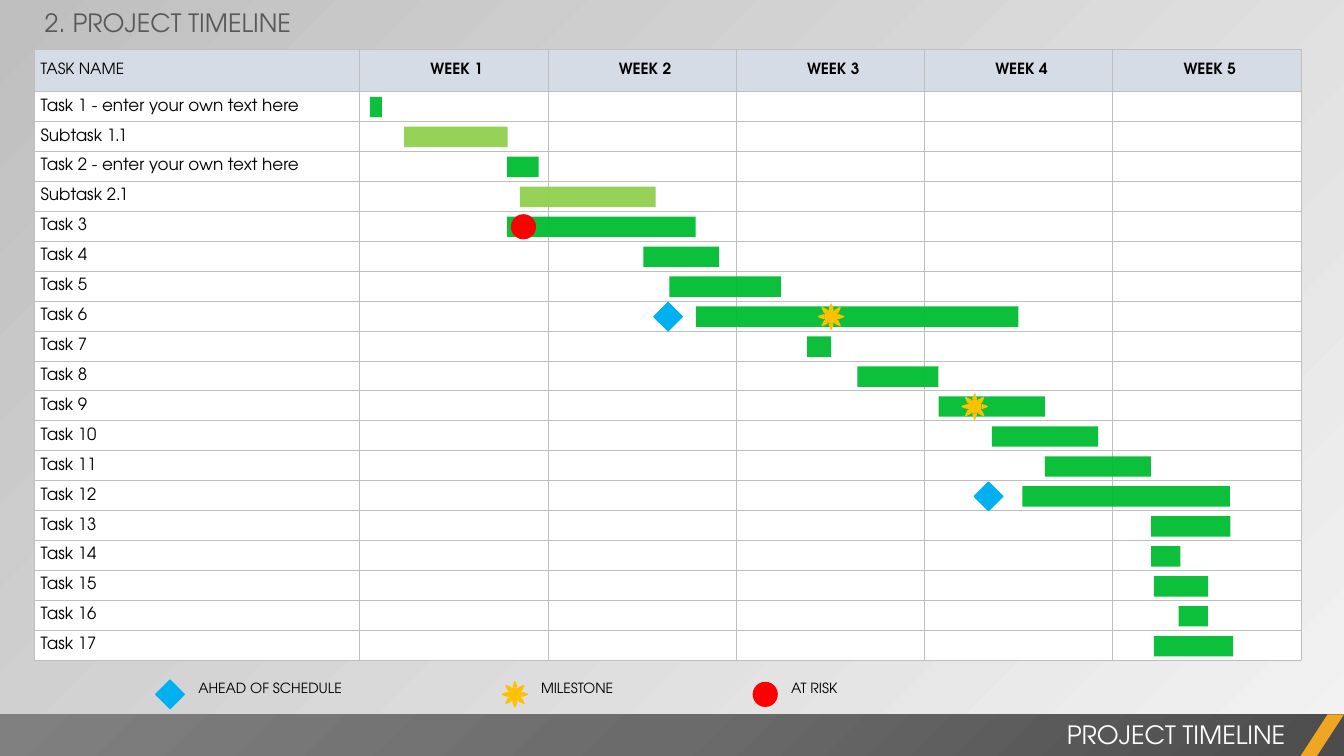
"""Build a five-week project timeline slide with a Gantt table, markers and a legend."""
import pptx
import pptx.dml.color
import pptx.enum.shapes
import pptx.enum.text
import pptx.oxml
import pptx.oxml.ns
import pptx.util
from lxml import etree

Pt = pptx.util.Pt
RGBColor = pptx.dml.color.RGBColor
Shape = pptx.enum.shapes.MSO_SHAPE
Align = pptx.enum.text.PP_ALIGN
Anchor = pptx.enum.text.MSO_ANCHOR
qn = pptx.oxml.ns.qn

FONT = "TeX Gyre Adventor"
BLACK = RGBColor(0x00, 0x00, 0x00)
WHITE = RGBColor(0xFF, 0xFF, 0xFF)
TITLE_GRAY = RGBColor(0x59, 0x59, 0x59)
HEADER_BLUE = RGBColor(0xD6, 0xDC, 0xE5)
GRID_GRAY = RGBColor(0xBF, 0xBF, 0xBF)
PALE_GRAY = RGBColor(0xF2, 0xF2, 0xF2)
TASK_GREEN = RGBColor(0x00, 0xBD, 0x32)
SUBTASK_GREEN = RGBColor(0x92, 0xD0, 0x50)
AHEAD_BLUE = RGBColor(0x00, 0xB0, 0xF0)
MILESTONE_GOLD = RGBColor(0xFF, 0xC0, 0x00)
RISK_RED = RGBColor(0xFF, 0x00, 0x00)
ACCENT_ORANGE = RGBColor(0xF0, 0xA6, 0x22)
FOOTER_STOPS = [(0, RGBColor(0x4C, 0x4C, 0x4C)), (50, RGBColor(0x6B, 0x6B, 0x6B)),
                (100, RGBColor(0x80, 0x80, 0x80))]

HEADERS = ["TASK NAME", "WEEK 1", "WEEK 2", "WEEK 3", "WEEK 4", "WEEK 5"]
TASKS = [
    ("Task 1 - enter your own text here", 264.2, 8.6),
    ("Subtask 1.1", 288.6, 74),
    ("Task 2 - enter your own text here", 362.3, 22.5),
    ("Subtask 2.1", 371.4, 97),
    ("Task 3", 362.3, 134.6),
    ("Task 4", 459.6, 54),
    ("Task 5", 478.2, 79.7),
    ("Task 6", 497, 230.5),
    ("Task 7", 576.5, 17.2),
    ("Task 8", 612.4, 58),
    ("Task 9", 670.5, 75.9),
    ("Task 10", 708.6, 75.8),
    ("Task 11", 746.4, 75.8),
    ("Task 12", 730.2, 148.4),
    ("Task 13", 822.3, 56.6),
    ("Task 14", 822.3, 20.8),
    ("Task 15", 824.2, 38.8),
    ("Task 16", 841.9, 20.9),
    ("Task 17", 824.2, 56.6),
]
MARKER_STYLES = {
    "ahead": (Shape.RECTANGLE, 14.4, AHEAD_BLUE, True),
    "milestone": (Shape.SUN, 18, MILESTONE_GOLD, True),
    "risk": (Shape.OVAL, 18, RISK_RED, False),
}
TASK_MARKERS = [
    ("risk", "Task 3", 373.9), ("milestone", "Task 6", 593.7), ("milestone", "Task 9", 696.2),
    ("ahead", "Task 6", 477.2), ("ahead", "Task 12", 706.1),
]
LEGEND = [
    ("ahead", 121.5, "AHEAD OF SCHEDULE", 134.6, 118.8),
    ("milestone", 367.8, "MILESTONE", 379.4, 67),
    ("risk", 546.6, "AT RISK", 558, 48.2),
]

SLIDE_WIDTH, SLIDE_HEIGHT = 960, 540
TABLE_LEFT, TABLE_TOP = 24.7, 35.4
NAME_WIDTH, WEEK_WIDTH = 232.2, 134.5
HEADER_HEIGHT, ROW_HEIGHT, BAR_HEIGHT = 30, 21.4, 14.6
LEGEND_CENTER, LEGEND_TOP = 496, 481.7
FOOTER_TOP, FOOTER_HEIGHT = 510.3, 30


def row_center(row):
    return TABLE_TOP + HEADER_HEIGHT + (row + 0.5) * ROW_HEIGHT + 0.3


def format_font(paragraph, size, color, bold=False):
    paragraph.font.name = FONT
    paragraph.font.size = Pt(size)
    paragraph.font.bold = bold
    paragraph.font.color.rgb = color


def place(shape, left, top, width, height):
    shape.left, shape.top, shape.width, shape.height = map(Pt, (left, top, width, height))


def write_text(shape, text, size, color, align=Align.LEFT, wrap=False):
    frame = shape.text_frame
    frame.text = text
    frame.word_wrap = wrap
    frame.auto_size = pptx.enum.text.MSO_AUTO_SIZE.SHAPE_TO_FIT_TEXT
    frame.vertical_anchor = Anchor.TOP
    frame.paragraphs[0].alignment = align
    format_font(frame.paragraphs[0], size, color)


def add_text(slide, box, text, size, color, **options):
    write_text(slide.shapes.add_textbox(*map(Pt, box)), text, size, color, **options)


def add_plain_shape(slide, kind, box, color=None, outlined=False):
    shape = slide.shapes.add_shape(kind, *map(Pt, box))
    shape.shadow.inherit = False
    if color is not None:
        shape.fill.solid()
        shape.fill.fore_color.rgb = color
    if outlined:
        shape.line.color.rgb = color
        shape.line.width = Pt(1)
    else:
        shape.line.fill.background()
    return shape


def add_marker(slide, style, center_x, center_y):
    kind, size, color, outlined = MARKER_STYLES[style]
    box = (center_x - size / 2, center_y - size / 2, size, size)
    add_plain_shape(slide, kind, box, color, outlined).rotation = 45


def format_cell(cell, text, header, centered):
    cell.margin_left = Pt(4.3)
    cell.margin_right = cell.margin_top = cell.margin_bottom = 0
    cell.vertical_anchor = Anchor.MIDDLE
    for side in ("a:lnL", "a:lnR", "a:lnT", "a:lnB"):
        border = etree.SubElement(cell._tc.get_or_add_tcPr(), qn(side), w=str(Pt(0.5)))
        border_fill = etree.SubElement(border, qn("a:solidFill"))
        etree.SubElement(border_fill, qn("a:srgbClr"), val=str(GRID_GRAY))
    cell.fill.solid()
    cell.fill.fore_color.rgb = HEADER_BLUE if header else WHITE
    cell.text = text
    paragraph = cell.text_frame.paragraphs[0]
    paragraph.alignment = Align.CENTER if centered else Align.LEFT
    format_font(paragraph, 11 if header else 12, BLACK, bold=header and centered)
    if not text:
        etree.SubElement(paragraph._p, qn("a:endParaRPr"), sz="1200")


def add_timeline_table(slide):
    rows = [HEADERS] + [[name] + [""] * (len(HEADERS) - 1) for name, _, _ in TASKS]
    widths = [NAME_WIDTH] + [WEEK_WIDTH] * (len(HEADERS) - 1)
    heights = [HEADER_HEIGHT] + [ROW_HEIGHT] * len(TASKS)
    table = slide.shapes.add_table(len(rows), len(widths), Pt(TABLE_LEFT), Pt(TABLE_TOP),
                                   Pt(sum(widths)), Pt(sum(heights))).table
    table.first_row = table.horz_banding = False
    for column, width in zip(table.columns, widths):
        column.width = Pt(width)
    for row, height in zip(table.rows, heights):
        row.height = Pt(height)
    for i, texts in enumerate(rows):
        for j, text in enumerate(texts):
            format_cell(table.cell(i, j), text, header=i == 0, centered=j > 0)


def add_task_bars(slide):
    for row, (name, left, width) in enumerate(TASKS):
        color = SUBTASK_GREEN if name.startswith("Subtask") else TASK_GREEN
        box = (left, row_center(row) - BAR_HEIGHT / 2, width, BAR_HEIGHT)
        bar = add_plain_shape(slide, Shape.RECTANGLE, box, color)
        bar_color = bar._element.spPr.find(".//" + qn("a:srgbClr"))
        etree.SubElement(bar_color, qn("a:alpha"), val="95000")


def add_footer(slide):
    band = add_plain_shape(slide, Shape.RECTANGLE, (0, FOOTER_TOP, SLIDE_WIDTH, FOOTER_HEIGHT))
    stops = "".join(f'<a:gs pos="{position * 1000}"><a:srgbClr val="{color}"/></a:gs>'
                    for position, color in FOOTER_STOPS)
    band._element.spPr.insert(2, pptx.oxml.parse_xml(
        f'<a:gradFill {pptx.oxml.ns.nsdecls("a")}><a:gsLst>{stops}</a:gsLst>'
        '<a:path path="circle"><a:fillToRect l="100000" t="100000"/></a:path></a:gradFill>'))
    add_text(slide, (378, 510, 547.2, 28.8), "PROJECT TIMELINE", 18, WHITE,
             align=Align.RIGHT, wrap=True)
    accent = add_plain_shape(slide, Shape.PARALLELOGRAM,
                             (928.8, FOOTER_TOP, 31.2, FOOTER_HEIGHT), ACCENT_ORANGE)
    accent.adjustments[0] = 0.65


def main():
    presentation = pptx.Presentation()
    presentation.slide_width, presentation.slide_height = Pt(SLIDE_WIDTH), Pt(SLIDE_HEIGHT)
    slide = presentation.slides.add_slide(presentation.slide_layouts[5])
    background = slide.background.fill
    background.gradient()
    background.gradient_angle = 135
    for stop, color in zip(background.gradient_stops, (PALE_GRAY, GRID_GRAY)):
        stop.color.rgb = color
    place(slide.shapes.title, 24.7, 1.8, 192.2, 29)
    write_text(slide.shapes.title, "2. PROJECT TIMELINE", 18, TITLE_GRAY)
    add_timeline_table(slide)
    add_task_bars(slide)
    task_names = [name for name, _, _ in TASKS]
    for style, name, center_x in TASK_MARKERS:
        add_marker(slide, style, center_x, row_center(task_names.index(name)))
    for style, center_x, label, left, width in LEGEND:
        add_marker(slide, style, center_x, LEGEND_CENTER)
        add_text(slide, (left, LEGEND_TOP, width, 19.4), label, 10, BLACK)
    add_footer(slide)
    presentation.save("out.pptx")


if __name__ == "__main__":
    main()
